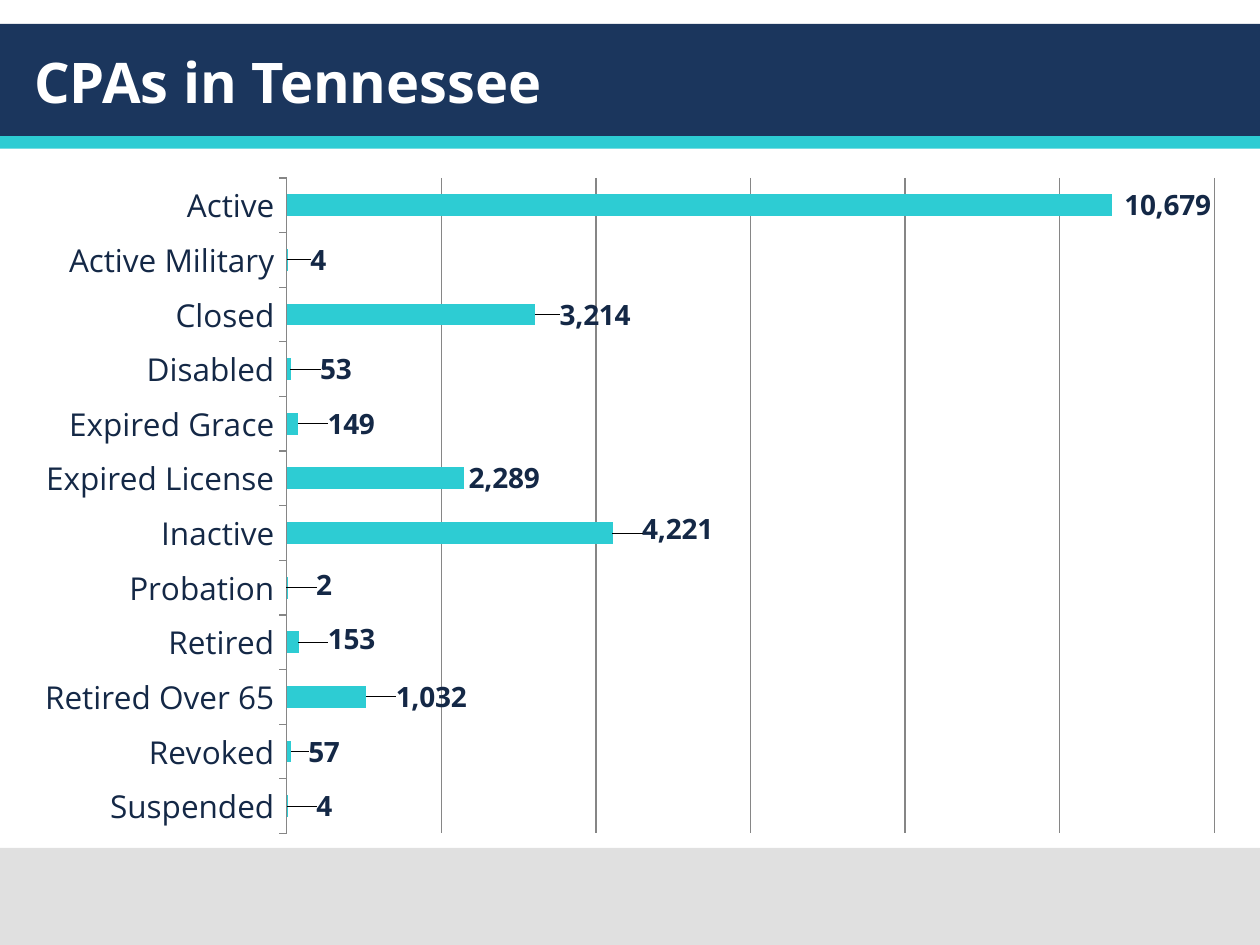
from copy import deepcopy
from dataclasses import dataclass

from lxml.etree import QName
from pptx import Presentation
from pptx.chart.chart import Chart
from pptx.chart.data import CategoryChartData
from pptx.dml.color import RGBColor
from pptx.enum.chart import XL_CHART_TYPE as ChartType
from pptx.enum.chart import XL_LABEL_POSITION as LabelPosition
from pptx.enum.chart import XL_TICK_MARK as TickMark
from pptx.enum.shapes import MSO_SHAPE as ShapeKind
from pptx.enum.text import MSO_ANCHOR as Anchor
from pptx.enum.text import PP_ALIGN as Align
from pptx.oxml import parse_xml
from pptx.oxml.ns import nsdecls
from pptx.slide import Slide
from pptx.util import Inches, Pt

NAVY = RGBColor(0x1B, 0x36, 0x5D)
TEAL = RGBColor(0x2D, 0xCC, 0xD3)
PALE_GRAY = RGBColor(0xE0, 0xE0, 0xE0)
LINE_GRAY = RGBColor(0x86, 0x86, 0x86)
INK = RGBColor(0x14, 0x28, 0x46)
WHITE = RGBColor(0xFF, 0xFF, 0xFF)
FONT = "Open Sans"
SLIDE_WIDTH, SLIDE_HEIGHT = Inches(10), Inches(7.5)
MARGIN = Inches(0.17)
CONTENT_WIDTH = SLIDE_WIDTH - 2 * MARGIN


@dataclass
class Band:
    top: float
    bottom: float
    color: RGBColor


@dataclass
class Status:
    name: str
    count: int
    shift_x: float
    shift_y: float = 0


BANDS = [
    Band(0.19, 1.08, NAVY),
    Band(1.08, 1.18, TEAL),
    Band(6.73, 7.5, PALE_GRAY),
]
STATUSES = [
    Status("Suspended", 4, 0.02),
    Status("Revoked", 57, 0.01),
    Status("Retired Over 65", 1032, 0.02),
    Status("Retired", 153, 0.02, -0.005),
    Status("Probation", 2, 0.02, -0.004),
    Status("Inactive", 4221, 0.02, -0.006),
    Status("Expired License", 2289, 0),
    Status("Expired Grace", 149, 0.02),
    Status("Disabled", 53, 0.02),
    Status("Closed", 3214, 0.016),
    Status("Active Military", 4, 0.015),
    Status("Active", 10679, 0.006),
]


def add_band(slide: Slide, band: Band) -> None:
    box = slide.shapes.add_shape(
        ShapeKind.RECTANGLE, 0, Inches(band.top),
        SLIDE_WIDTH, Inches(band.bottom - band.top),
    )
    box.shadow.inherit = False
    box.fill.solid()
    box.fill.fore_color.rgb = band.color
    box.line.fill.background()


def format_title(slide: Slide, text: str) -> None:
    title = slide.shapes.title
    title.left, title.top = MARGIN, Inches(0.19)
    title.width, title.height = CONTENT_WIDTH, Inches(0.9)
    frame = title.text_frame
    frame.text = text
    frame.vertical_anchor = Anchor.MIDDLE
    para = frame.paragraphs[0]
    para.alignment = Align.LEFT
    font = para.runs[0].font
    font.name, font.size, font.bold = FONT, Pt(32), True
    font.color.rgb = WHITE
    slide.shapes._spTree.append(title._element)


def place_plot(chart: Chart, x: float, y: float, width: float, height: float) -> None:
    area = chart._chartSpace.chart.plotArea
    for layout in area.findall(QName(area.nsmap["c"], "layout").text):
        area.remove(layout)
    area.insert(0, parse_xml(
        f'<c:layout {nsdecls("c")}><c:manualLayout><c:layoutTarget val="inner"/>'
        f'<c:xMode val="edge"/><c:yMode val="edge"/><c:x val="{x}"/><c:y val="{y}"/>'
        f'<c:w val="{width}"/><c:h val="{height}"/></c:manualLayout></c:layout>'
    ))


def shift_labels(labels) -> None:
    parent = labels._element
    shared = [part for part in parent if QName(part).localname != "showLeaderLines"]
    for index, status in enumerate(STATUSES):
        if not status.shift_x:
            continue
        label = parse_xml(
            f'<c:dLbl {nsdecls("c")}><c:idx val="{index}"/><c:layout><c:manualLayout>'
            f'<c:x val="{status.shift_x}"/><c:y val="{status.shift_y}"/>'
            f'</c:manualLayout></c:layout></c:dLbl>'
        )
        label.extend(deepcopy(shared))
        shared[0].addprevious(label)


def add_status_chart(slide: Slide) -> None:
    data = CategoryChartData(number_format="#,##0")
    data.categories = [status.name for status in STATUSES]
    data.add_series("Series 1", [status.count for status in STATUSES])
    chart = slide.shapes.add_chart(
        ChartType.BAR_CLUSTERED, MARGIN, Inches(1.31),
        CONTENT_WIDTH, Inches(5.42), data,
    ).chart
    chart.has_legend = False
    chart.has_title = False
    chart.font.name, chart.font.size = FONT, Pt(10)
    place_plot(chart, 0.218, 0.019, 0.762, 0.96)

    categories = chart.category_axis
    categories.major_tick_mark = TickMark.OUTSIDE
    categories.format.line.color.rgb = LINE_GRAY
    font = categories.tick_labels.font
    font.name, font.size = FONT, Pt(18)
    font.color.rgb = INK

    values = chart.value_axis
    values.visible = False
    values.minimum_scale, values.maximum_scale, values.major_unit = 0, 12000, 2000
    values.has_major_gridlines = True
    grid_line = values.major_gridlines.format.line
    grid_line.color.rgb, grid_line.width = LINE_GRAY, Pt(0.75)

    plot = chart.plots[0]
    plot.gap_width = 150
    plot.vary_by_categories = False
    series = plot.series[0]
    series.format.fill.solid()
    series.format.fill.fore_color.rgb = TEAL
    labels = series.data_labels
    labels.show_value = True
    labels.number_format, labels.number_format_is_linked = "#,##0", False
    labels.position = LabelPosition.OUTSIDE_END
    font = labels.font
    font.name, font.size, font.bold = FONT, Pt(16), True
    font.color.rgb = INK
    shift_labels(labels)


def main() -> None:
    deck = Presentation()
    deck.slide_width, deck.slide_height = SLIDE_WIDTH, SLIDE_HEIGHT
    page = deck.slides.add_slide(deck.slide_layouts[5])
    for band in BANDS:
        add_band(page, band)
    format_title(page, "CPAs in Tennessee")
    add_status_chart(page)
    deck.save("out.pptx")


if __name__ == "__main__":
    main()
